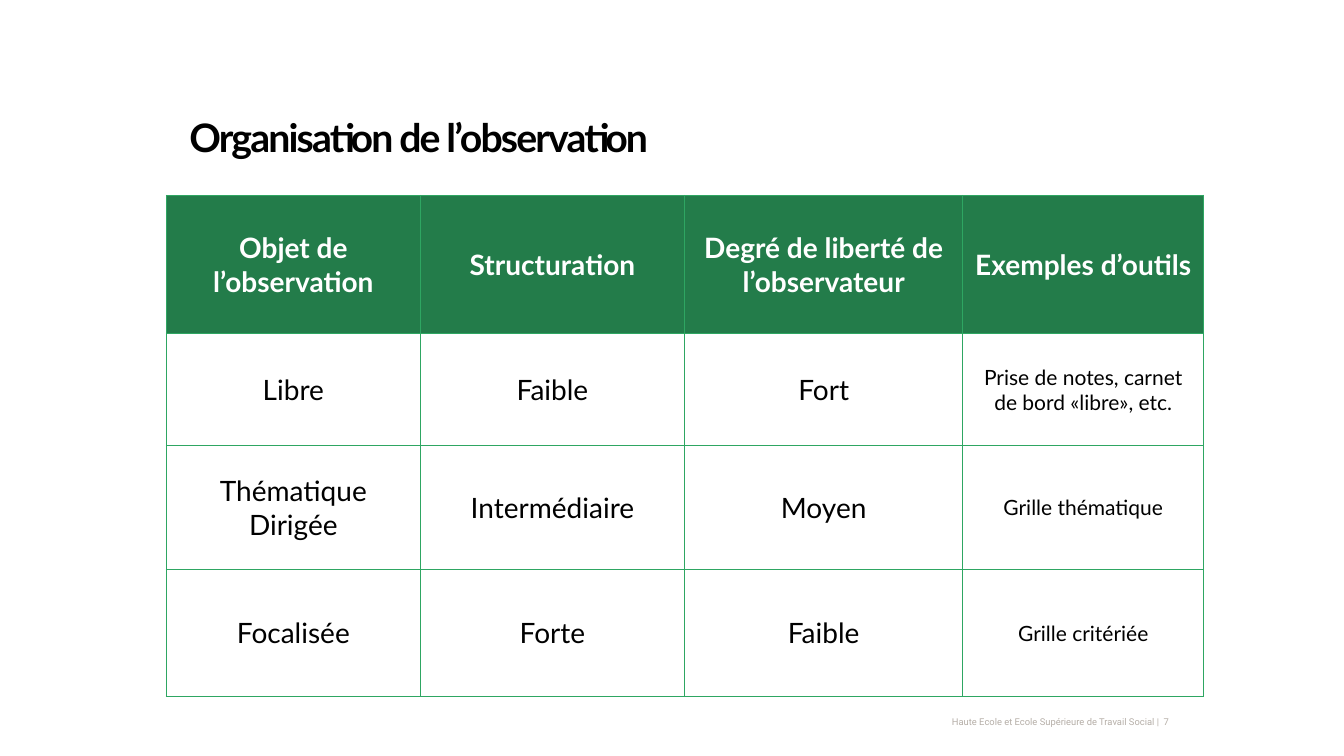
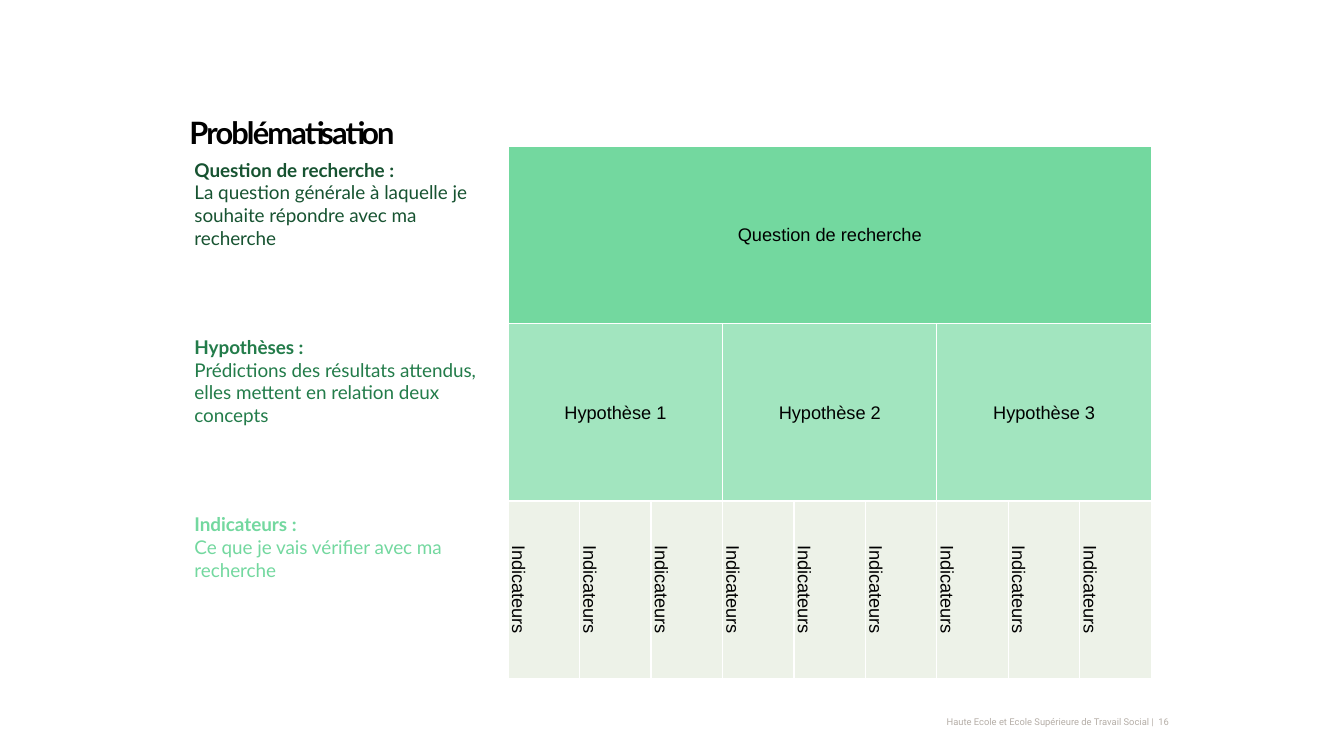
from lxml.etree import SubElement
from pptx import Presentation
from pptx.dml.color import RGBColor
from pptx.enum.text import MSO_ANCHOR, PP_ALIGN
from pptx.oxml import parse_xml
from pptx.oxml.ns import nsdecls, qn
from pptx.util import Inches, Pt

BLACK, WHITE = "000000", "FFFFFF"
DARK_GREEN, GREEN, BORDER_GREEN = "175331", "237C4A", "2EA662"
LIGHT_GREEN, PALE_GREEN, GREY_GREEN = "73D89F", "A2E5BF", "EDF2E8"
FOOTER_COLOR = "B5AEA7"
FOOTER_TEXT = "Haute Ecole et Ecole Supérieure de Travail Social |  "

OBSERVATION_ROWS = [
    ["Objet de l’observation", "Structuration", "Degré de liberté de l’observateur", "Exemples d’outils"],
    ["Libre", "Faible", "Fort", "Prise de notes, carnet de bord «libre», etc."],
    ["Thématique Dirigée", "Intermédiaire", "Moyen", "Grille thématique"],
    ["Focalisée", "Forte", "Faible", "Grille critériée"],
]
DEFINITIONS = [
    ("Question de recherche :", "La question générale à laquelle je souhaite répondre avec ma recherche", DARK_GREEN),
    ("Hypothèses :", "Prédictions des résultats attendus, elles mettent en relation deux concepts", GREEN),
    ("Indicateurs :", "Ce que je vais vérifier avec ma recherche", LIGHT_GREEN),
]
LEVELS = [
    (["Question de recherche"], LIGHT_GREEN),
    ([f"Hypothèse {number}" for number in range(1, 4)], PALE_GREEN),
    (["Indicateurs"] * 9, GREY_GREEN),
]
LEVEL_TOP, LEVEL_HEIGHT = 1.45, 1.76


def color(value):
    return RGBColor.from_string(value)


def set_attributes(target, values):
    for name, value in values.items():
        setattr(target, name, value)


def write_paragraph(paragraph, text, size, font_name, font_color, bold=False, **layout):
    set_attributes(paragraph, layout)
    run = paragraph.add_run()
    run.text = text
    set_attributes(run.font, {"size": Pt(size), "name": font_name, "bold": bold})
    run.font.color.rgb = color(font_color)
    return run


def add_text_frame(slide, left, top, width, height, **values):
    box = slide.shapes.add_textbox(Inches(left), Inches(top), Inches(width), Inches(height))
    set_attributes(box.text_frame, {"word_wrap": True, **values})
    return box.text_frame


def add_slide(presentation, title, title_size, number):
    slide = presentation.slides.add_slide(presentation.slide_layouts[6])
    footer = add_text_frame(
        slide, 8.44, 7.1, 3.29, 0.14, vertical_anchor=MSO_ANCHOR.MIDDLE,
        margin_left=Inches(0.13), margin_right=Inches(0.13),
        margin_top=Inches(0.07), margin_bottom=Inches(0.07))
    write_paragraph(footer.paragraphs[0], f"{FOOTER_TEXT}{number}", 6.7, "Roboto", FOOTER_COLOR,
                    alignment=PP_ALIGN.RIGHT, line_spacing=Pt(7))
    heading = add_text_frame(slide, 1.78, 1.08, 10.65, 1.04)
    run = write_paragraph(heading.paragraphs[0], title, title_size, "Lato", BLACK, bold=True)
    run.font._element.set("spc", "-130")
    return slide


def add_table(slide, left, top, widths, heights, border_color):
    frame = slide.shapes.add_table(
        len(heights), len(widths), Inches(left), Inches(top),
        Inches(sum(widths)), Inches(sum(heights)))
    table = frame.table
    set_attributes(table, {"first_row": False, "horz_banding": False})
    for column, width in zip(table.columns, widths):
        column.width = Inches(width)
    for row, height in zip(table.rows, heights):
        row.height = Inches(height)
    for cell in table.iter_cells():
        cell.fill.background()
        add_borders(cell, border_color)
    return table


def add_borders(cell, border_color):
    properties = cell._tc.get_or_add_tcPr()
    for position, side in enumerate(("lnL", "lnR", "lnT", "lnB")):
        line = parse_xml(f'<a:{side} {nsdecls("a")} w="12700"/>')
        fill = SubElement(line, qn("a:solidFill"))
        SubElement(fill, qn("a:srgbClr"), val=border_color)
        properties.insert(position, line)


def write_cell(cell, text, size, font_name, font_color, fill_color=None, bold=False, **values):
    set_attributes(cell, {"vertical_anchor": MSO_ANCHOR.MIDDLE, **values})
    if fill_color:
        cell.fill.solid()
        cell.fill.fore_color.rgb = color(fill_color)
    write_paragraph(cell.text_frame.paragraphs[0], text, size, font_name, font_color, bold,
                    alignment=PP_ALIGN.CENTER)


def add_observation_table(slide):
    table = add_table(slide, 1.65, 1.94, [2.52, 2.62, 2.76, 2.39], [1.37, 1.11, 1.23, 1.26], BORDER_GREEN)
    for row, texts in enumerate(OBSERVATION_ROWS):
        for column, text in enumerate(texts):
            cell = table.cell(row, column)
            if row == 0:
                write_cell(cell, text, 20, "Lato", WHITE, GREEN, bold=True)
            else:
                write_cell(cell, text, 15 if column == 3 else 20, "Lato", BLACK)


def add_level_table(slide):
    column_count = 9
    table = add_table(slide, 5.04, LEVEL_TOP, [6.38 / column_count] * column_count,
                      [LEVEL_HEIGHT] * len(LEVELS), WHITE)
    margins = {f"margin_{side}": Inches(0.01) for side in ("left", "right", "top")}
    margins["margin_bottom"] = 0
    for row, (texts, fill_color) in enumerate(LEVELS):
        span = column_count // len(texts)
        for index, text in enumerate(texts):
            cell = table.cell(row, index * span)
            if span > 1:
                cell.merge(table.cell(row, (index + 1) * span - 1))
            else:
                cell._tc.get_or_add_tcPr().set("vert", "vert")
            write_cell(cell, text, 13, "Arial", BLACK, fill_color, **margins)


def add_definitions(slide):
    for index, (term, definition, text_color) in enumerate(DEFINITIONS):
        top = LEVEL_TOP + 0.07 + index * LEVEL_HEIGHT
        text_frame = add_text_frame(slide, 1.83, top, 3.21, 1.01)
        write_paragraph(text_frame.paragraphs[0], term, 13.5, "Lato", text_color, bold=True)
        write_paragraph(text_frame.add_paragraph(), definition, 13.5, "Lato", text_color)


def main():
    presentation = Presentation()
    set_attributes(presentation, {"slide_width": Inches(13.33), "slide_height": Inches(7.5)})
    add_observation_table(add_slide(presentation, "Organisation de l’observation", 28, 7))
    slide = add_slide(presentation, "Problématisation", 22, 16)
    add_level_table(slide)
    add_definitions(slide)
    presentation.save("out.pptx")


if __name__ == "__main__":
    main()
